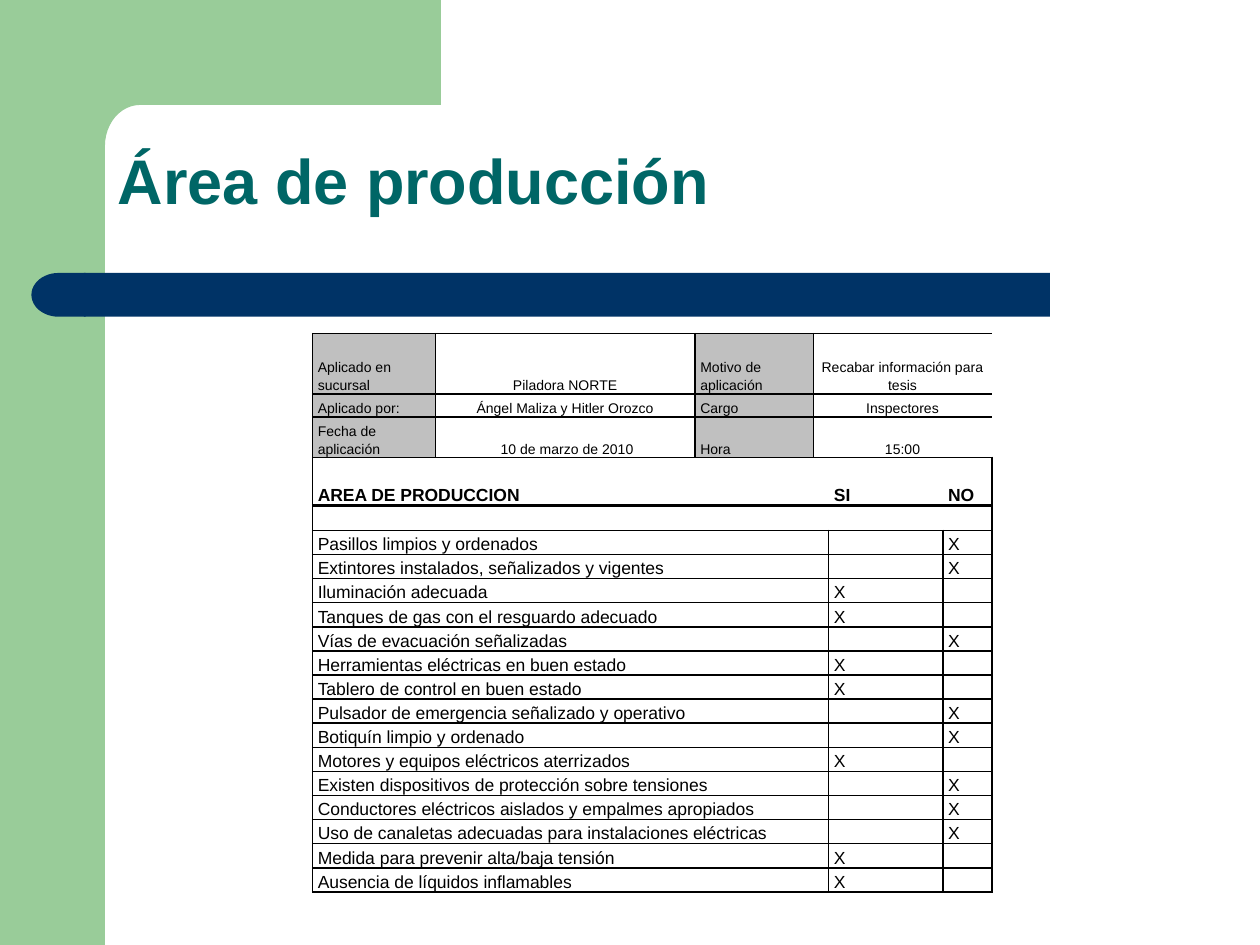
"""Build the production-area inspection checklist slide."""
from math import cos, pi, sin

from lxml.etree import SubElement
from pptx import Presentation
from pptx.dml.color import RGBColor
from pptx.enum.shapes import MSO_SHAPE
from pptx.enum.text import MSO_ANCHOR, PP_ALIGN
from pptx.oxml.ns import qn
from pptx.util import Pt

COLORS = {"green": "99CC99", "navy": "003366", "teal": "006666",
          "black": "000000", "gray": "C0C0C0"}
HEADER = [
    ["Aplicado en sucursal", "Piladora NORTE", "Motivo de aplicación",
     "Recabar información para tesis"],
    ["Aplicado por:", "Ángel Maliza y Hitler Orozco", "Cargo", "Inspectores"],
    ["Fecha de aplicación", " 10 de marzo de 2010", "Hora", "15:00"],
]
CHECKS = [
    ("Pasillos limpios y ordenados", "NO"),
    ("Extintores instalados, señalizados y vigentes", "NO"),
    ("Iluminación adecuada", "SI"),
    ("Tanques de gas con el resguardo adecuado", "SI"),
    ("Vías de evacuación señalizadas", "NO"),
    ("Herramientas eléctricas en buen estado", "SI"),
    ("Tablero de control en buen estado", "SI"),
    ("Pulsador de emergencia señalizado y operativo", "NO"),
    ("Botiquín limpio y ordenado", "NO"),
    ("Motores y equipos eléctricos aterrizados", "SI"),
    ("Existen dispositivos de protección sobre tensiones", "NO"),
    ("Conductores eléctricos aislados y empalmes apropiados", "NO"),
    ("Uso de canaletas adecuadas para instalaciones eléctricas", "NO"),
    ("Medida para prevenir alta/baja tensión", "SI"),
    ("Ausencia de líquidos inflamables", "SI"),
]


def paint(sp, color):
    sp.shadow.inherit = False
    sp.fill.solid()
    sp.fill.fore_color.rgb = RGBColor.from_string(COLORS[color])
    sp.line.fill.background()


def add_border(cell, side, width):
    ln = SubElement(cell._tc.get_or_add_tcPr(), qn(f"a:ln{side}"), w=str(Pt(width)))
    if width:
        fill = SubElement(ln, qn("a:solidFill"))
        SubElement(fill, qn("a:srgbClr"), val=COLORS["black"])
    else:
        SubElement(ln, qn("a:noFill"))


prs = Presentation()
prs.slide_width, prs.slide_height = Pt(720), Pt(540)
s = prs.slides.add_slide(prs.slide_layouts[5])

sp = s.shapes.add_shape(MSO_SHAPE.RECTANGLE, Pt(0), Pt(0), Pt(60), Pt(540))
paint(sp, "green")

arc = [(80 - 20 * sin(i * pi / 24), 83.5 - 23.5 * cos(i * pi / 24)) for i in range(13)]
outline = [(252, 0), (252, 60), *arc, (60, 92), (36, 92), (36, 0)]
points = [(Pt(x), Pt(y)) for x, y in outline]
fb = s.shapes.build_freeform(*points[0])
fb.add_line_segments(points[1:], close=True)
paint(fb.convert_to_shape(), "green")

sp = s.shapes.add_shape(MSO_SHAPE.RECTANGLE, Pt(48), Pt(156), Pt(552), Pt(25))
paint(sp, "navy")
sp = s.shapes.add_shape(MSO_SHAPE.FLOWCHART_DELAY, Pt(18), Pt(156), Pt(31), Pt(25))
sp._element.spPr.xfrm.set("flipH", "1")
paint(sp, "navy")

sp = s.shapes.title
sp.left, sp.top, sp.width, sp.height = Pt(60), Pt(60), Pt(624), Pt(90)
tf = sp.text_frame
tf.word_wrap = True
tf.vertical_anchor = MSO_ANCHOR.MIDDLE
p = tf.paragraphs[0]
p.alignment = PP_ALIGN.LEFT
p.line_spacing = 0.9
r = p.add_run()
r.text = "Área de producción"
r.font.name, r.font.size, r.font.bold = "Arial", Pt(36), True
r.font.color.rgb = RGBColor.from_string(COLORS["teal"])

rows = [texts + ["", ""] for texts in HEADER]
rows += [["AREA DE PRODUCCION", "", "", "", "SI", "NO"], [""] * 6]
for text, answer in CHECKS:
    rows.append([text, "", "", ""] + ["X" if answer == a else "" for a in ("SI", "NO")])
widths = [70.2, 148.4, 67.6, 5.8, 65.2, 28]
heights = [34.5, 13.1, 23.2, 27.4, 14.3] + [13.8] * len(CHECKS)

sp = s.shapes.add_table(len(rows), len(widths), Pt(178.6), Pt(190.6),
                        Pt(sum(widths)), Pt(sum(heights)))
table = sp.table
table.first_row = table.horz_banding = False
style = table._tbl.tblPr.find(qn("a:tableStyleId"))
style.text = "{2D5ABB26-0587-4C30-8999-92F81FD0307C}"
for col, width in zip(table.columns, widths):
    col.width = Pt(width)

for i, texts in enumerate(rows):
    table.rows[i].height = Pt(heights[i])
    header, section = i < 3, i in (3, 4)
    if header:
        table.cell(i, 3).merge(table.cell(i, 5))
        breaks = {0, 1, 2, 3, 6}
    else:
        table.cell(i, 0).merge(table.cell(i, 3))
        breaks = {0, 6} if section else {0, 4, 5, 6}
    size = 8 if header else 10
    for j, text in enumerate(texts):
        cell = table.cell(i, j)
        cell.margin_left = cell.margin_right = Pt(3)
        cell.margin_top = cell.margin_bottom = Pt(0)
        cell.vertical_anchor = MSO_ANCHOR.BOTTOM
        add_border(cell, "L", 1 if j in breaks else 0)
        add_border(cell, "R", 1 if j + 1 in breaks else 0)
        add_border(cell, "T", 2.25 if i == 4 else 1)
        add_border(cell, "B", 2.25 if i == 3 else 1)
        if header and j in (0, 2):
            cell.fill.solid()
            cell.fill.fore_color.rgb = RGBColor.from_string(COLORS["gray"])
        else:
            cell.fill.background()
        p = cell.text_frame.paragraphs[0]
        p.line_spacing = 1.15
        p.alignment = PP_ALIGN.CENTER if header and j in (1, 3) else PP_ALIGN.LEFT
        if text:
            r = p.add_run()
            r.text = text
            r.font.name, r.font.size, r.font.bold = "Arial", Pt(size), section
            r.font.color.rgb = RGBColor.from_string(COLORS["black"])
        else:
            SubElement(p._p, qn("a:endParaRPr"), sz=str(size * 100))

prs.save("out.pptx")
